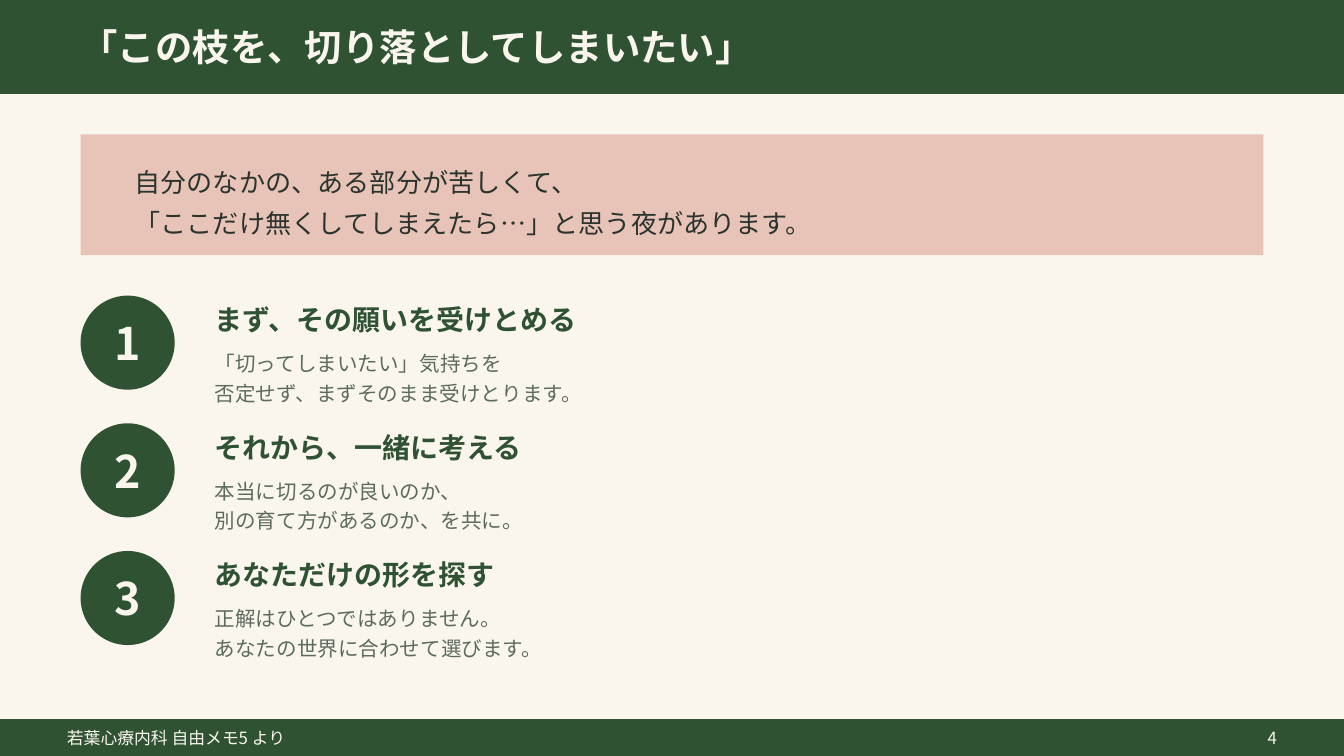
from dataclasses import dataclass

import lxml.etree
import pptx
import pptx.dml.color
import pptx.enum.shapes
import pptx.enum.text
import pptx.oxml.ns
import pptx.util

EMU_PER_PX = 4572
ALIGN = pptx.enum.text.PP_ALIGN
SHAPES = pptx.enum.shapes.MSO_SHAPE


@dataclass(frozen=True)
class TextStyle:
    size: int
    color: str
    bold: bool = False
    line_spacing: float = 1.0


@dataclass(frozen=True)
class Theme:
    font: str = "Noto Sans CJK JP"
    green: str = "2F5233"
    cream: str = "FAF6EE"
    pink: str = "E8C4B8"
    title: TextStyle = TextStyle(20, "FAF6EE", True)
    quote: TextStyle = TextStyle(14, "2A332D", line_spacing=1.3)
    number: TextStyle = TextStyle(24, "FAF6EE", True)
    heading: TextStyle = TextStyle(15, "2F5233", True)
    detail: TextStyle = TextStyle(11, "5C6B5E", line_spacing=1.2)
    footer: TextStyle = TextStyle(9, "FAF6EE")


@dataclass(frozen=True)
class Box:
    left: int
    top: int
    width: int
    height: int

    def emu(self) -> list[int]:
        return [px * EMU_PER_PX for px in (self.left, self.top, self.width, self.height)]


@dataclass(frozen=True)
class Step:
    heading: str
    details: tuple[str, ...]


THEME = Theme()
SLIDE = Box(0, 0, 2000, 1125)
HEADER = Box(0, 0, 2000, 140)
FOOTER = Box(0, 1070, 2000, 56)
STEP_TOP = 440
STEP_PITCH = 190
STEPS = (
    Step("まず、その願いを受けとめる",
         ("「切ってしまいたい」気持ちを", "否定せず、まずそのまま受けとります。")),
    Step("それから、一緒に考える",
         ("本当に切るのが良いのか、", "別の育て方があるのか、を共に。")),
    Step("あなただけの形を探す",
         ("正解はひとつではありません。", "あなたの世界に合わせて選びます。")),
)


def rgb(color: str) -> pptx.dml.color.RGBColor:
    return pptx.dml.color.RGBColor.from_string(color)


def write_text(shape, lines: tuple[str, ...], style: TextStyle, alignment=ALIGN.LEFT) -> None:
    frame = shape.text_frame
    frame.word_wrap = True
    frame.auto_size = pptx.enum.text.MSO_AUTO_SIZE.NONE
    frame.vertical_anchor = pptx.enum.text.MSO_ANCHOR.MIDDLE
    for index, line in enumerate(lines):
        paragraph = frame.add_paragraph() if index else frame.paragraphs[0]
        paragraph.alignment = alignment
        paragraph.line_spacing = style.line_spacing
        paragraph.space_before = pptx.util.Pt(0)
        run = paragraph.add_run()
        run.text = line
        run.font.size = pptx.util.Pt(style.size)
        run.font.bold = style.bold
        run.font.color.rgb = rgb(style.color)
        run.font.name = THEME.font
        east_asian = lxml.etree.SubElement(run.font._element, pptx.oxml.ns.qn("a:ea"))
        east_asian.set("typeface", THEME.font)


def add_filled(slide, kind, box: Box, color: str):
    shape = slide.shapes.add_shape(kind, *box.emu())
    shape.shadow.inherit = False
    shape.fill.solid()
    shape.fill.fore_color.rgb = rgb(color)
    shape.line.fill.background()
    return shape


def add_text(slide, box: Box, lines: tuple[str, ...], style: TextStyle, alignment=ALIGN.LEFT) -> None:
    write_text(slide.shapes.add_textbox(*box.emu()), lines, style, alignment)


def fill_placeholder(placeholder, box: Box, lines: tuple[str, ...], style: TextStyle, panel) -> None:
    placeholder.left, placeholder.top, placeholder.width, placeholder.height = box.emu()
    write_text(placeholder, lines, style)
    for paragraph in placeholder.text_frame.paragraphs:
        properties = paragraph._p.get_or_add_pPr()
        properties.set("marL", "0")
        properties.set("indent", "0")
        lxml.etree.SubElement(properties, pptx.oxml.ns.qn("a:buNone"))
    placeholder.element.addprevious(panel.element)


def add_step(slide, number: int, step: Step) -> None:
    top = STEP_TOP + (number - 1) * STEP_PITCH
    circle = add_filled(slide, SHAPES.OVAL, Box(120, top, 140, 140), THEME.green)
    write_text(circle, (str(number),), THEME.number, ALIGN.CENTER)
    add_text(slide, Box(300, top, 1600, 70), (step.heading,), THEME.heading)
    add_text(slide, Box(300, top + 64, 1600, 110), step.details, THEME.detail)


def main() -> None:
    presentation = pptx.Presentation()
    presentation.slide_width, presentation.slide_height = SLIDE.emu()[2:]
    slide = presentation.slides.add_slide(presentation.slide_layouts[1])
    slide.background.fill.solid()
    slide.background.fill.fore_color.rgb = rgb(THEME.cream)

    header = add_filled(slide, SHAPES.RECTANGLE, HEADER, THEME.green)
    fill_placeholder(slide.shapes.title, Box(100, 0, 1800, 140),
                     ("「この枝を、切り落としてしまいたい」",), THEME.title, header)
    panel = add_filled(slide, SHAPES.RECTANGLE, Box(120, 200, 1760, 180), THEME.pink)
    fill_placeholder(slide.placeholders[1], Box(180, 210, 1640, 170),
                     ("自分のなかの、ある部分が苦しくて、",
                      "「ここだけ無くしてしまえたら…」と思う夜があります。"),
                     THEME.quote, panel)

    for number, step in enumerate(STEPS, start=1):
        add_step(slide, number, step)

    add_filled(slide, SHAPES.RECTANGLE, FOOTER, THEME.green)
    add_text(slide, Box(80, FOOTER.top, 1200, FOOTER.height),
             ("若葉心療内科 自由メモ5 より",), THEME.footer)
    add_text(slide, Box(1800, FOOTER.top, 120, FOOTER.height),
             ("4",), THEME.footer, ALIGN.RIGHT)
    presentation.save("out.pptx")


if __name__ == "__main__":
    main()
